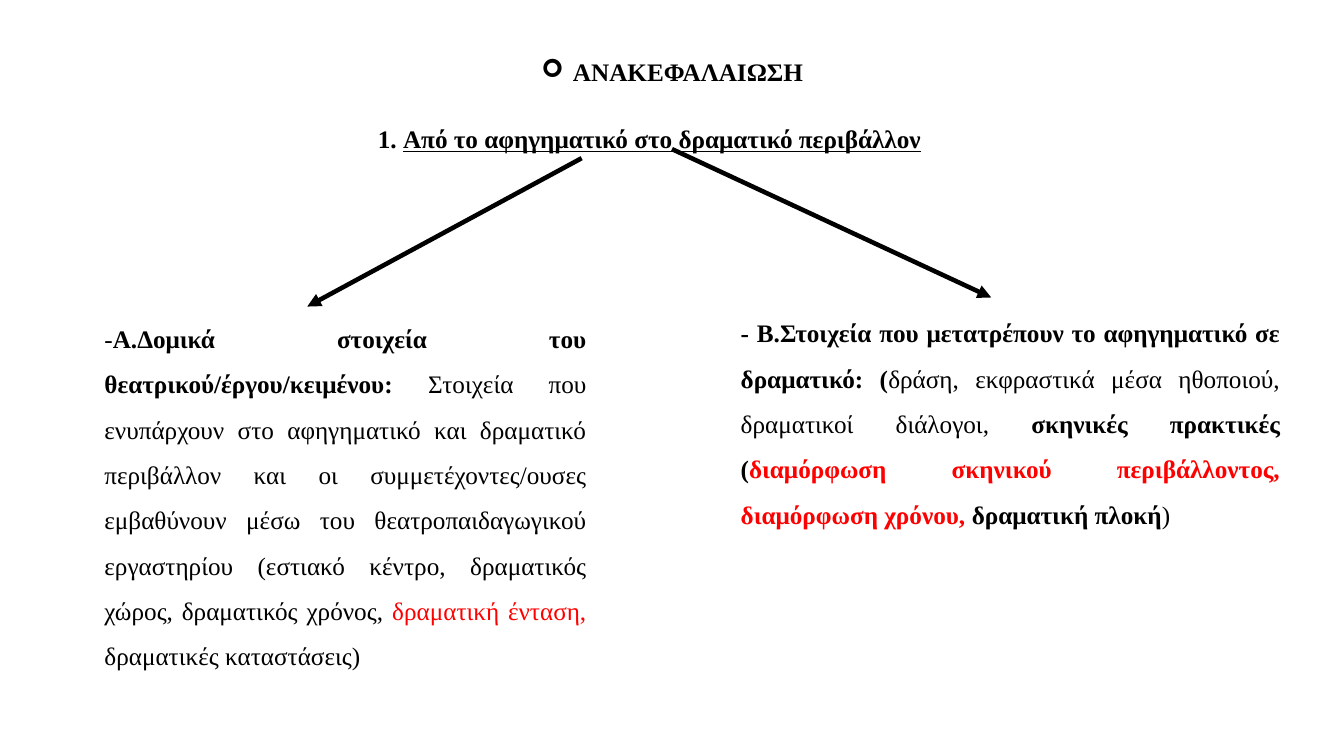
from lxml.etree import SubElement
from pptx import Presentation
from pptx.dml.color import RGBColor
from pptx.enum.shapes import MSO_CONNECTOR
from pptx.enum.text import MSO_ANCHOR, MSO_AUTO_SIZE, PP_ALIGN
from pptx.oxml.ns import qn
from pptx.util import Pt

COLORS = {"text": "000000", "accent": "FF0000"}
FONT = "Times New Roman"


def write_text(box, spans, align=PP_ALIGN.CENTER, spacing=1.0, bullet=None):
    """Fill a box with one paragraph; each span is (text, format keywords)."""
    frame = box.text_frame
    frame.word_wrap = True
    frame.auto_size = MSO_AUTO_SIZE.NONE
    frame.vertical_anchor = MSO_ANCHOR.TOP
    para = frame.paragraphs[0]
    para.alignment = align
    para.line_spacing = spacing
    if bullet:
        properties = para._p.get_or_add_pPr()
        properties.set("marL", str(Pt(22.5)))
        properties.set("indent", str(-Pt(22.5)))
        SubElement(properties, qn("a:buFont"), typeface="Wingdings")
        SubElement(properties, qn("a:buChar"), char=bullet)
    for text, style in spans:
        span = para.add_run()
        span.text = text
        span.font.name = FONT
        span.font.size = Pt(18)
        span.font.bold = style.get("bold", False)
        span.font.underline = style.get("underline", False)
        span.font.color.rgb = RGBColor.from_string(COLORS[style.get("color", "text")])


deck = Presentation()
deck.slide_width, deck.slide_height = Pt(960), Pt(540)
page = deck.slides.add_slide(deck.slide_layouts[5])

# Title
title = page.shapes.title
title.left, title.top, title.width, title.height = Pt(186.5), Pt(26), Pt(587.5), Pt(36)
write_text(title, [("ΑΝΑΚΕΦΑΛΑΙΩΣΗ", {"bold": True})], spacing=1.5, bullet="➢")

# Section heading
heading = page.shapes.add_textbox(Pt(7), Pt(84.5), Pt(914), Pt(29))
write_text(heading, [
    ("1. ", {"bold": True}),
    ("Από το αφηγηματικό στο δραματικό περιβάλλον", {"bold": True, "underline": True}),
])

# Arrows from the heading to the two branches
for start_x, start_y, end_x, end_y in [(415.5, 113, 219.5, 219), (480, 106.5, 708, 212.5)]:
    arrow = page.shapes.add_connector(
        MSO_CONNECTOR.STRAIGHT, Pt(start_x), Pt(start_y), Pt(end_x), Pt(end_y))
    arrow.line.color.rgb = RGBColor.from_string(COLORS["text"])
    arrow.line.width = Pt(3.25)
    SubElement(arrow.line._get_or_add_ln(), qn("a:tailEnd"), type="triangle")
    SubElement(arrow._element.spPr, qn("a:effectLst"))

# Branch texts
branches = [
    ((67.5, 216.5, 358.5, 265), [
        ("-", {}),
        ("Α.Δομικά στοιχεία του θεατρικού/έργου/κειμένου: ", {"bold": True}),
        ("Στοιχεία που ενυπάρχουν στο αφηγηματικό και δραματικό περιβάλλον και οι "
         "συμμετέχοντες/ουσες εμβαθύνουν μέσω του θεατροπαιδαγωγικού εργαστηρίου "
         "(εστιακό κέντρο, δραματικός χώρος, δραματικός χρόνος, ", {}),
        ("δραματική ένταση, ", {"color": "accent"}),
        ("δραματικές καταστάσεις)", {}),
    ]),
    ((522, 212.5, 399.5, 167), [
        ("- Β.Στοιχεία που μετατρέπουν το αφηγηματικό σε δραματικό: (", {"bold": True}),
        ("δράση, εκφραστικά μέσα ηθοποιού, δραματικοί διάλογοι, ", {}),
        ("σκηνικές πρακτικές (", {"bold": True}),
        ("διαμόρφωση σκηνικού περιβάλλοντος, διαμόρφωση χρόνου, ",
         {"bold": True, "color": "accent"}),
        ("δραματική πλοκή", {"bold": True}),
        (")", {}),
    ]),
]
for place, spans in branches:
    branch = page.shapes.add_textbox(*[Pt(length) for length in place])
    write_text(branch, spans, align=PP_ALIGN.JUSTIFY, spacing=1.5)

deck.save("out.pptx")
